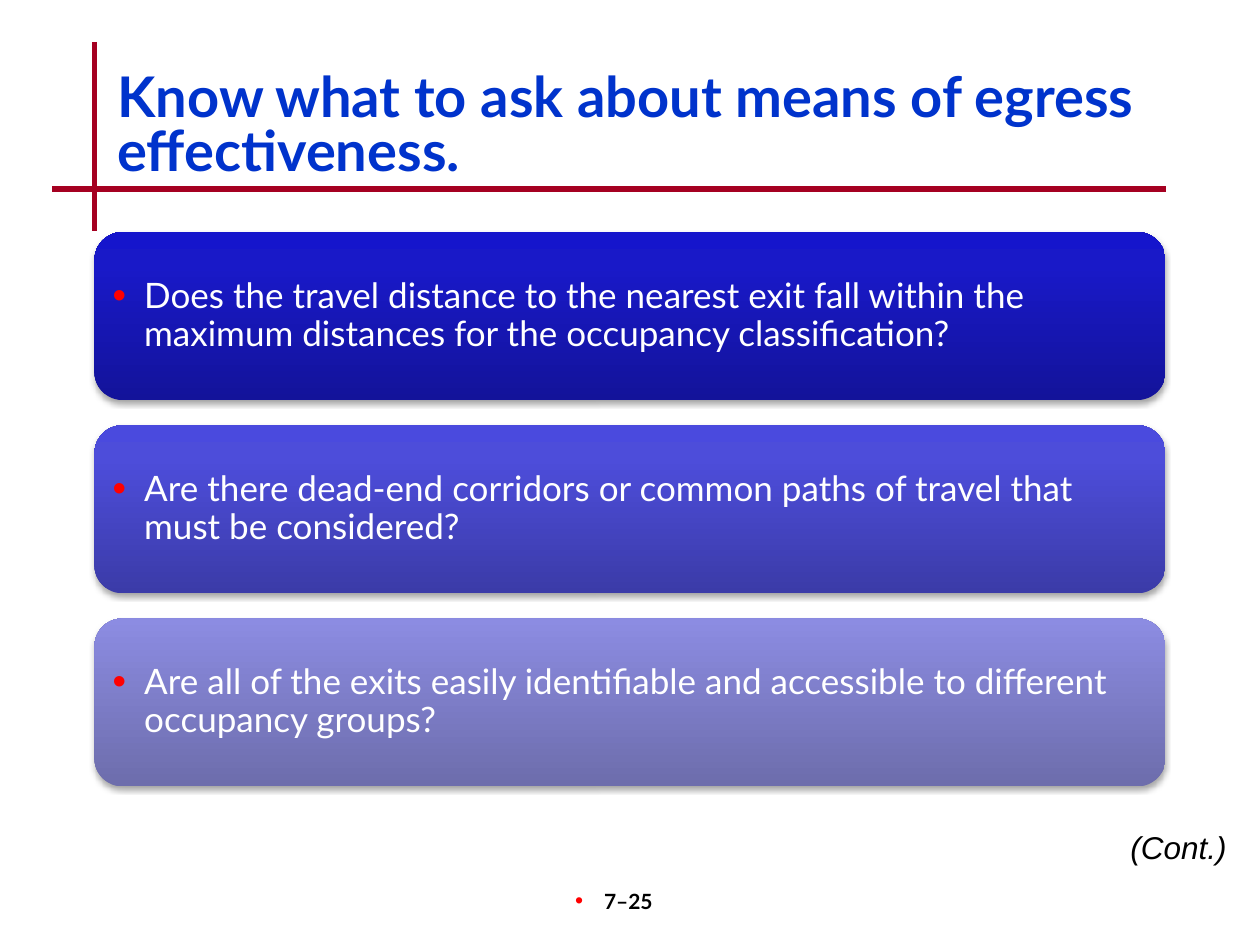
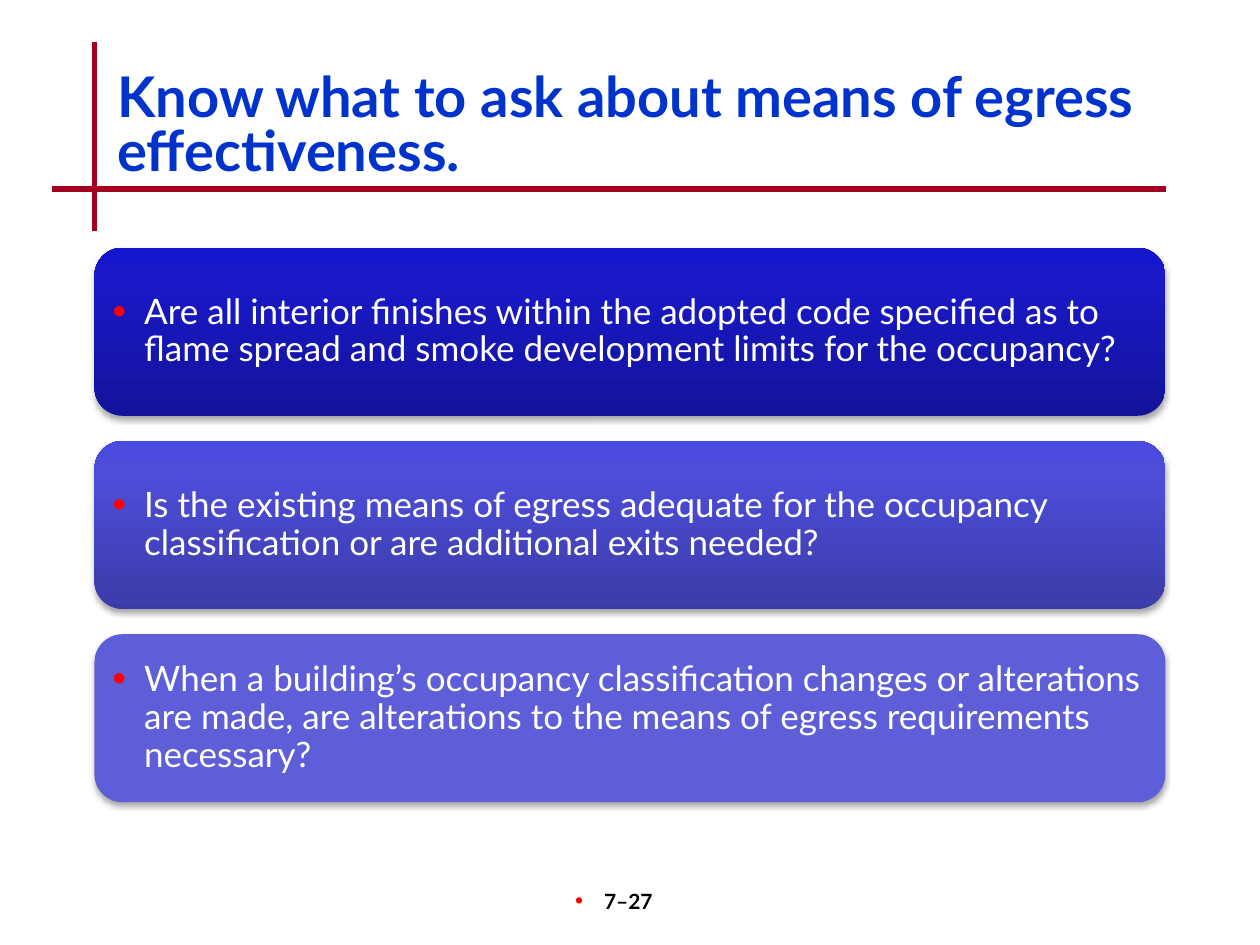
from lxml.etree import SubElement
from pptx import Presentation
from pptx.dml.color import RGBColor
from pptx.enum.shapes import MSO_CONNECTOR, MSO_SHAPE
from pptx.enum.text import MSO_ANCHOR, PP_ALIGN
from pptx.oxml.ns import qn
from pptx.util import Inches, Pt

# Grid of 120 columns by 90 rows
CELL = 1 / 12
COLS, ROWS = 120, 90

RULE, TITLE, DOT = "A50021", "0033CC", "FF0000"
BLACK, WHITE = "000000", "FFFFFF"
DEEP = [(0, "13139A"), (80, "1919C8"), (100, "1515CC")]
MID = [(0, "3B3BA8"), (80, "4D4DDA"), (100, "4A4ADE")]
PALE = [(0, "6D6DAC"), (100, "8C8CE2")]
FLAT = "5E5ED8"

HEAD = "Know what to ask about means of egress effectiveness."
PAGES = [
    ("7–25", 22.1, "(Cont.)", [
        (DEEP, "Does the travel distance to the nearest exit fall within the "
               "maximum distances for the occupancy classification?"),
        (MID, "Are there dead-end corridors or common paths of travel that "
              "must be considered?"),
        (PALE, "Are all of the exits easily identifiable and accessible to "
               "different occupancy groups?"),
    ]),
    ("7–27", 23.6, None, [
        (DEEP, "Are all interior finishes within the adopted code specified as to "
               "flame spread and smoke development limits for the occupancy?"),
        (MID, "Is the existing means of egress adequate for the occupancy "
              "classification or are additional exits needed?"),
        (FLAT, "When a building’s occupancy classification changes or "
               "alterations are made, are alterations to the means of egress "
               "requirements necessary?"),
    ]),
]


def grid(*cells):
    return [Inches(cell * CELL) for cell in cells]


def ink(code):
    return RGBColor.from_string(code)


def node(parent, tag, **attrs):
    return SubElement(parent, qn(tag), {k: str(v) for k, v in attrs.items()})


def bullet(para, hang, size):
    props = para._p.get_or_add_pPr()
    props.set("marL", str(Inches(hang)))
    props.set("indent", str(-Inches(hang)))
    node(node(props, "a:buClr"), "a:srgbClr", val=DOT)
    node(props, "a:buSzPct", val=size * 1000)
    node(props, "a:buFont", typeface="Arial")
    node(props, "a:buChar", char="•")


def write(slide, box, text, size, color, face="Lato", bold=False, italic=False,
          align=PP_ALIGN.LEFT, anchor=MSO_ANCHOR.TOP, space=1.0, hang=0, dot=100):
    frame = slide.shapes.add_textbox(*grid(*box)).text_frame
    frame.word_wrap = True
    frame.vertical_anchor = anchor
    para = frame.paragraphs[0]
    para.text = text
    if hang:
        bullet(para, hang, dot)
    para.alignment = align
    para.line_spacing = space
    font = para.font
    font.name, font.size, font.color.rgb = face, Pt(size), ink(color)
    font.bold, font.italic = bold, italic
    return frame


def rule(slide, *ends):
    line = slide.shapes.add_connector(MSO_CONNECTOR.STRAIGHT, *grid(*ends))
    line.line.color.rgb = ink(RULE)
    line.line.width = Pt(3)
    node(line._element.spPr, "a:effectLst")


def paint(shape, tone):
    if isinstance(tone, str):
        shape.fill.solid()
        shape.fill.fore_color.rgb = ink(tone)
        return
    shape.fill.gradient()
    shape.fill.gradient_angle = 90
    stops = shape._element.spPr.find(qn("a:gradFill")).find(qn("a:gsLst"))
    stops.clear()
    for pos, code in tone:
        node(node(stops, "a:gs", pos=pos * 1000), "a:srgbClr", val=code)


def shade(shape):
    shape.shadow.inherit = False
    effect = shape._element.spPr.find(qn("a:effectLst"))
    drop = node(effect, "a:outerShdw", blurRad=Pt(3.1), dist=Pt(1.8),
                dir=90 * 60000, rotWithShape=0)
    node(node(drop, "a:srgbClr", val=BLACK), "a:alpha", val=35000)


def card(slide, box, tone, text):
    shape = slide.shapes.add_shape(MSO_SHAPE.ROUNDED_RECTANGLE, *grid(*box))
    paint(shape, tone)
    shape.line.fill.background()
    shade(shape)
    # Text sits inside the rounded corners
    left, top, wide, high = box
    pad = 0.78
    inner = (left + pad, top + pad, wide - 2 * pad, high - 2 * pad)
    frame = write(slide, inner, text, 20, WHITE, anchor=MSO_ANCHOR.MIDDLE,
                  space=0.9, hang=0.25, dot=110)
    frame.margin_left = frame.margin_right = Inches(0.08)
    frame.margin_top = frame.margin_bottom = Inches(0.08)


def stack(slide, box, cards):
    left, top, wide, high = box
    gap = 2.4
    each = (high - gap * (len(cards) - 1)) / len(cards)
    for i, (tone, text) in enumerate(cards):
        card(slide, (left, top + i * (each + gap), wide, each), tone, text)


def base(slide, number):
    # Crossed rules
    rule(slide, 9, 4, 9, 22)
    rule(slide, 5, 18, 111, 18)
    # Page number
    foot = write(slide, (47, 84, 25, 6), number, 12, BLACK, bold=True,
                 align=PP_ALIGN.CENTER, hang=0.23, dot=110)
    foot.margin_right = Inches(0.27)
    # Title
    write(slide, (10, 6.5, 102, 14), HEAD, 32, TITLE, bold=True, space=0.8)


def main():
    deck = Presentation()
    deck.slide_width, deck.slide_height = grid(COLS, ROWS)
    for number, top, more, cards in PAGES:
        slide = deck.slides.add_slide(deck.slide_layouts[6])
        base(slide, number)
        stack(slide, (9, top, 102, 52.8), cards)
        # Continuation mark
        if more:
            write(slide, (98, 78.25, 20, 4.8), more, 18, BLACK, face="Arial",
                  italic=True, align=PP_ALIGN.RIGHT)
    deck.save("out.pptx")


if __name__ == "__main__":
    main()
